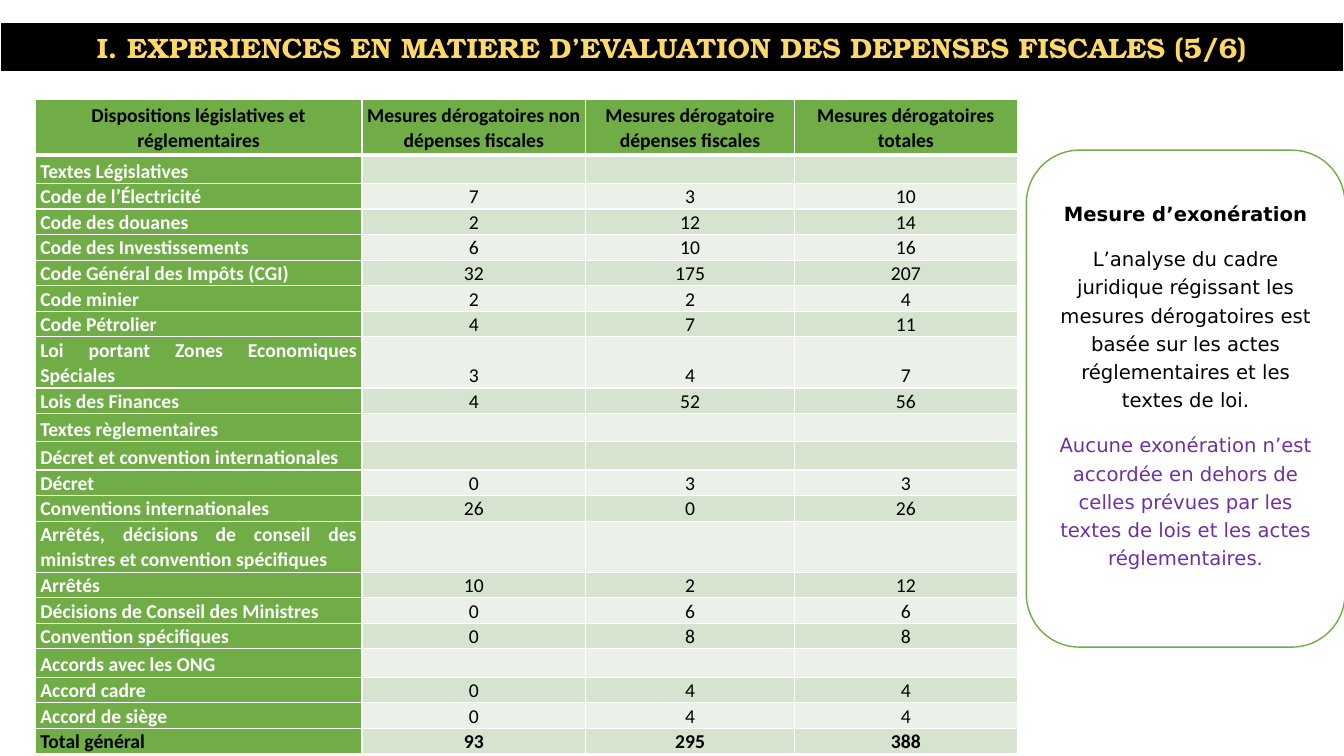
import pptx
import pptx.dml.color
import pptx.enum.shapes
import pptx.enum.text
import pptx.oxml
import pptx.oxml.ns
import pptx.util

Inches, Pt = pptx.util.Inches, pptx.util.Pt
Align = pptx.enum.text.PP_ALIGN
Anchor = pptx.enum.text.MSO_ANCHOR

GREEN, WHITE, BLACK = "70AD47", "FFFFFF", "000000"
BANDS = ("EBF1E9", "D5E3CF")
HEADS = (
    "Dispositions législatives et réglementaires",
    "Mesures dérogatoires non dépenses fiscales",
    "Mesures dérogatoire dépenses fiscales",
    "Mesures dérogatoires totales",
)
ROWS = (
    ("Textes Législatives", "", "", ""),
    ("Code de l’Électricité", 7, 3, 10),
    ("Code des douanes", 2, 12, 14),
    ("Code des Investissements", 6, 10, 16),
    ("Code Général des Impôts (CGI)", 32, 175, 207),
    ("Code minier", 2, 2, 4),
    ("Code Pétrolier", 4, 7, 11),
    ("Loi portant Zones Economiques Spéciales", 3, 4, 7),
    ("Lois des Finances", 4, 52, 56),
    ("Textes règlementaires", "", "", ""),
    ("Décret et convention internationales", "", "", ""),
    ("Décret", 0, 3, 3),
    ("Conventions internationales", 26, 0, 26),
    ("Arrêtés, décisions de conseil des ministres et convention spécifiques",
     "", "", ""),
    ("Arrêtés", 10, 2, 12),
    ("Décisions de Conseil des Ministres", 0, 6, 6),
    ("Convention spécifiques", 0, 8, 8),
    ("Accords avec les ONG", "", "", ""),
    ("Accord cadre", 0, 4, 4),
    ("Accord de siège", 0, 4, 4),
    ("Total général", 93, 295, 388),
)
WIDTHS = (3.24, 2.22, 2.07, 2.21)
LONG = 38  # labels longer than this take two lines


def rgb(code):
    return pptx.dml.color.RGBColor.from_string(code)


def paint(item, code):
    item.fill.solid()
    item.fill.fore_color.rgb = rgb(code)


def write(para, text, font="Calibri", size=14, color=BLACK, bold=False,
          align=Align.CENTER, line=1.0, before=0, after=0):
    para.alignment = align
    para.line_spacing = line
    para.space_before, para.space_after = Pt(before), Pt(after)
    run = para.add_run()
    run.text = str(text)
    run.font.name, run.font.size, run.font.bold = font, Pt(size), bold
    run.font.color.rgb = rgb(color)


def edge(cell, base):
    """Draw white borders, with the bottom one base points wide."""
    props = cell._tc.get_or_add_tcPr()
    for side, width in (("L", 1), ("R", 1), ("T", 1), ("B", base)):
        props.append(pptx.oxml.parse_xml(
            f'<a:ln{side} {pptx.oxml.ns.nsdecls("a")} w="{Pt(width)}">'
            f'<a:solidFill><a:srgbClr val="{WHITE}"/></a:solidFill>'
            f'</a:ln{side}>'))


def add_title(slide):
    title = slide.shapes.title
    title.left, title.top = Inches(0), Inches(0.22)
    title.width, title.height = Inches(13.33), Inches(0.5)
    paint(title, BLACK)
    title.line.color.rgb = rgb(WHITE)
    title.line.width = Pt(1.5)
    frame = title.text_frame
    frame.auto_size = pptx.enum.text.MSO_AUTO_SIZE.NONE
    frame.vertical_anchor = Anchor.MIDDLE
    write(frame.paragraphs[0],
          "I. EXPERIENCES EN MATIERE D’EVALUATION DES DEPENSES FISCALES (5/6)",
          font="TeX Gyre Bonum", size=20, color="FFD966", bold=True)


def fill_cell(cell, text, row, col):
    head, total = row == 0, row == len(ROWS)
    edge(cell, 3 if head else 1)
    paint(cell, GREEN if head or col == 0 else BANDS[row % 2])
    cell.margin_left = cell.margin_right = Inches(0.05)
    cell.margin_top = cell.margin_bottom = Inches(0)
    cell.vertical_anchor = Anchor.MIDDLE if head else Anchor.BOTTOM
    label = col == 0 and not head
    write(cell.text_frame.paragraphs[0], text,
          color=WHITE if label and not total else BLACK,
          bold=head or total or label,
          align=Align.JUSTIFY if label else Align.CENTER,
          line=1.07, after=8)


def add_grid(slide):
    table = slide.shapes.add_table(
        len(ROWS) + 1, len(HEADS), Inches(0.35), Inches(0.99),
        Inches(sum(WIDTHS)), Inches(6.13)).table
    for col, width in zip(table.columns, WIDTHS):
        col.width = Inches(width)
    for r, values in enumerate((HEADS,) + ROWS):
        high = 0.5 if len(values[0]) > LONG else 0.24
        table.rows[r].height = Inches(high if r else 0.55)
        for c, text in enumerate(values):
            fill_cell(table.cell(r, c), text, r, c)


def add_note(slide):
    note = slide.shapes.add_shape(
        pptx.enum.shapes.MSO_SHAPE.ROUNDED_RECTANGLE,
        Inches(10.18), Inches(1.49), Inches(3.16), Inches(4.93))
    note.shadow.inherit = False
    paint(note, WHITE)
    note.line.color.rgb = rgb(GREEN)
    note.line.width = Pt(1)
    frame = note.text_frame
    frame.word_wrap = True
    frame.vertical_anchor = Anchor.MIDDLE
    frame.margin_bottom = Inches(0.35)
    parts = (
        ("Mesure d’exonération", BLACK, True),
        ("L’analyse du cadre juridique régissant les mesures dérogatoires est "
         "basée sur les actes réglementaires et les textes de loi.",
         BLACK, False),
        ("Aucune exonération n’est accordée en dehors de celles prévues par "
         "les textes de lois et les actes réglementaires.", "7030A0", False),
    )
    for i, (text, color, bold) in enumerate(parts):
        para = frame.add_paragraph() if i else frame.paragraphs[0]
        write(para, text, font="DejaVu Sans", color=color, bold=bold,
              line=1.2, before=6, after=6)


def main():
    deck = pptx.Presentation()
    deck.slide_width, deck.slide_height = Inches(13.33), Inches(7.5)
    slide = deck.slides.add_slide(deck.slide_layouts[5])
    add_title(slide)
    add_grid(slide)
    add_note(slide)
    deck.save("out.pptx")


if __name__ == "__main__":
    main()
